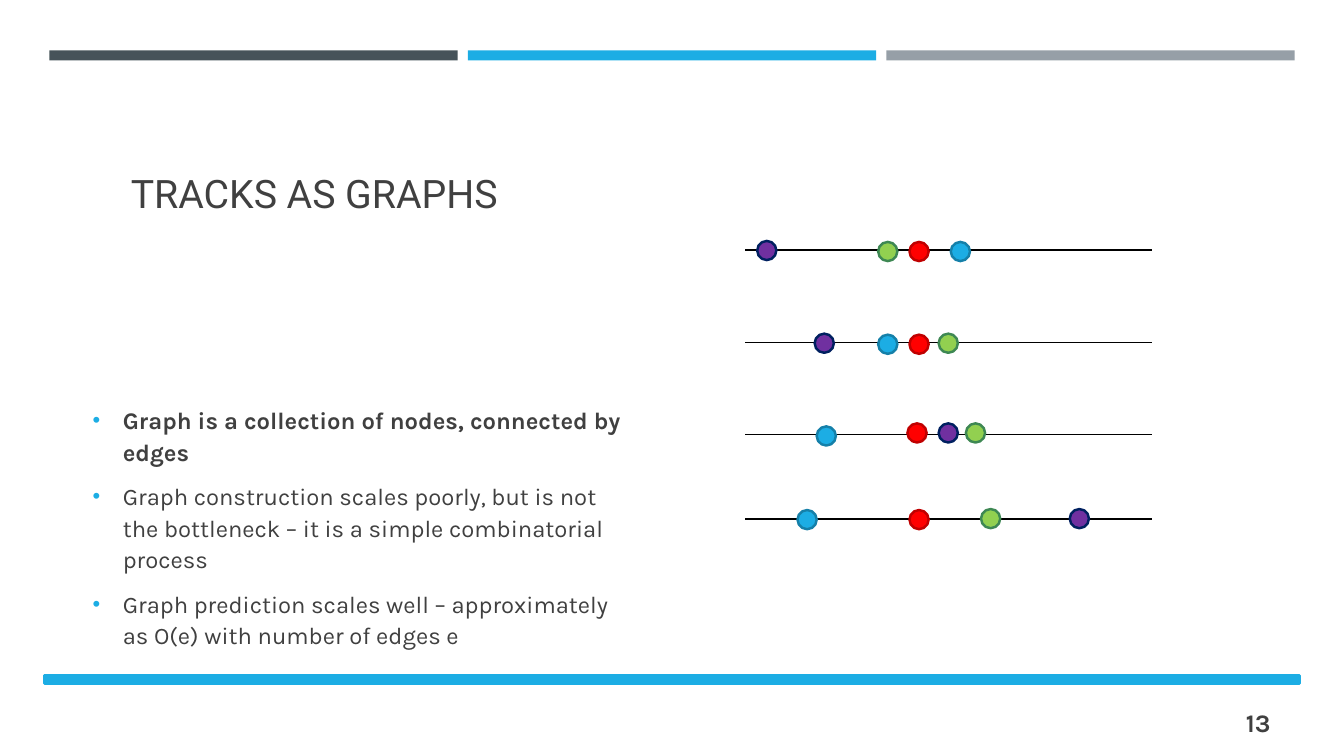
"""Build the slide that shows particle tracks as graphs."""
from lxml import etree
from pptx import Presentation
from pptx.dml.color import RGBColor
from pptx.enum.shapes import MSO_CONNECTOR, MSO_SHAPE
from pptx.enum.text import MSO_ANCHOR, PP_ALIGN
from pptx.oxml.ns import qn
from pptx.util import Inches, Pt

RECT, OVAL = MSO_SHAPE.RECTANGLE, MSO_SHAPE.OVAL
STRAIGHT = MSO_CONNECTOR.STRAIGHT
MIDDLE, BOTTOM = MSO_ANCHOR.MIDDLE, MSO_ANCHOR.BOTTOM
LEFT, RIGHT = PP_ALIGN.LEFT, PP_ALIGN.RIGHT
BLUE, GRAY = "1CADE4", "404040"


def color(code):
    return RGBColor.from_string(code)


def add_form(kind, box, fill, edge=None):
    form = slide.shapes.add_shape(kind, *map(Inches, box))
    form.shadow.inherit = False
    form.fill.solid()
    form.fill.fore_color.rgb = color(fill)
    if edge:
        form.line.color.rgb = color(edge)
        form.line.width = Pt(1.75)
    else:
        form.line.fill.background()


prs = Presentation()
prs.slide_width, prs.slide_height = Inches(13.33), Inches(7.5)
slide = prs.slides.add_slide(prs.slide_layouts[6])

for col, fill in enumerate(("465359", BLUE, "969FA7")):
    add_form(RECT, (0.49 + 4.15 * col, 0.5, 4.05, 0.1), fill)
add_form(RECT, (0.44, 6.7, 12.45, 0.08), BLUE, BLUE)

points = (
    "Graph is a collection of nodes, connected by edges",
    "Graph construction scales poorly, but is not the bottleneck – it is a simple combinatorial process",
    "Graph prediction scales well – approximately as O(e) with number of edges e",
)
texts = (
    ((1.2, 0.75, 11.5, 1.45), "TRACKS AS GRAPHS", BOTTOM, LEFT, "Roboto", 28, False),
    ((0.82, 2.84, 5.56, 4.76), "\n".join(points), MIDDLE, LEFT, "Karla", 17, False),
    ((11.55, 6.97, 1.15, 0.4), "13", MIDDLE, RIGHT, "Karla", 18, True),
)
frames = []
for box, text, anchor, align, face, size, bold in texts:
    frame = slide.shapes.add_textbox(*map(Inches, box)).text_frame
    frame.word_wrap = True
    frame.vertical_anchor = anchor
    frame.text = text
    for para in frame.paragraphs:
        para.alignment = align
        font = para.runs[0].font
        font.name, font.size, font.bold = face, Pt(size), bold
        font.color.rgb = color(GRAY)
    frames.append(frame)

body = frames[1].paragraphs
for order, para in enumerate(body):
    props = para._p.get_or_add_pPr()
    props.set("marL", str(Inches(0.3)))
    props.set("indent", str(-Inches(0.3)))
    tint = etree.SubElement(props, qn("a:buClr"))
    etree.SubElement(tint, qn("a:srgbClr"), val=BLUE)
    etree.SubElement(props, qn("a:buSzPct"), val="92000")
    etree.SubElement(props, qn("a:buFont"), typeface="Arial")
    etree.SubElement(props, qn("a:buChar"), char="•")
    para.line_spacing = 1.1
    para.space_before = Pt(3.4 if order else 0)
    para.space_after = Pt(6)
body[0].runs[0].font.bold = True

for y in (2.48, 3.4, 4.31, 5.15):
    track = slide.shapes.add_connector(
        STRAIGHT, Inches(7.39), Inches(y), Inches(11.43), Inches(y))
    track.line.color.rgb = color("000000")
    track.line.width = Pt(1)
    etree.SubElement(track._element.spPr, qn("a:effectLst"))

nodes = (
    (BLUE, "1580A9", ((7.91, 5.06), (8.1, 4.23), (8.71, 3.32), (9.43, 2.4))),
    ("FF0000", "C00000", ((9.02, 5.06), (9, 4.2), (9.02, 3.32), (9.02, 2.4))),
    ("92D050", "3E8853", ((9.73, 5.05), (9.58, 4.2), (9.31, 3.31), (8.71, 2.4))),
    ("7030A0", "002060", ((10.61, 5.05), (9.31, 4.2), (8.08, 3.31), (7.51, 2.39))),
)
for fill, edge, spots in nodes:
    for x, y in spots:
        add_form(OVAL, (x, y, 0.19, 0.19), fill, edge)

prs.save("out.pptx")
